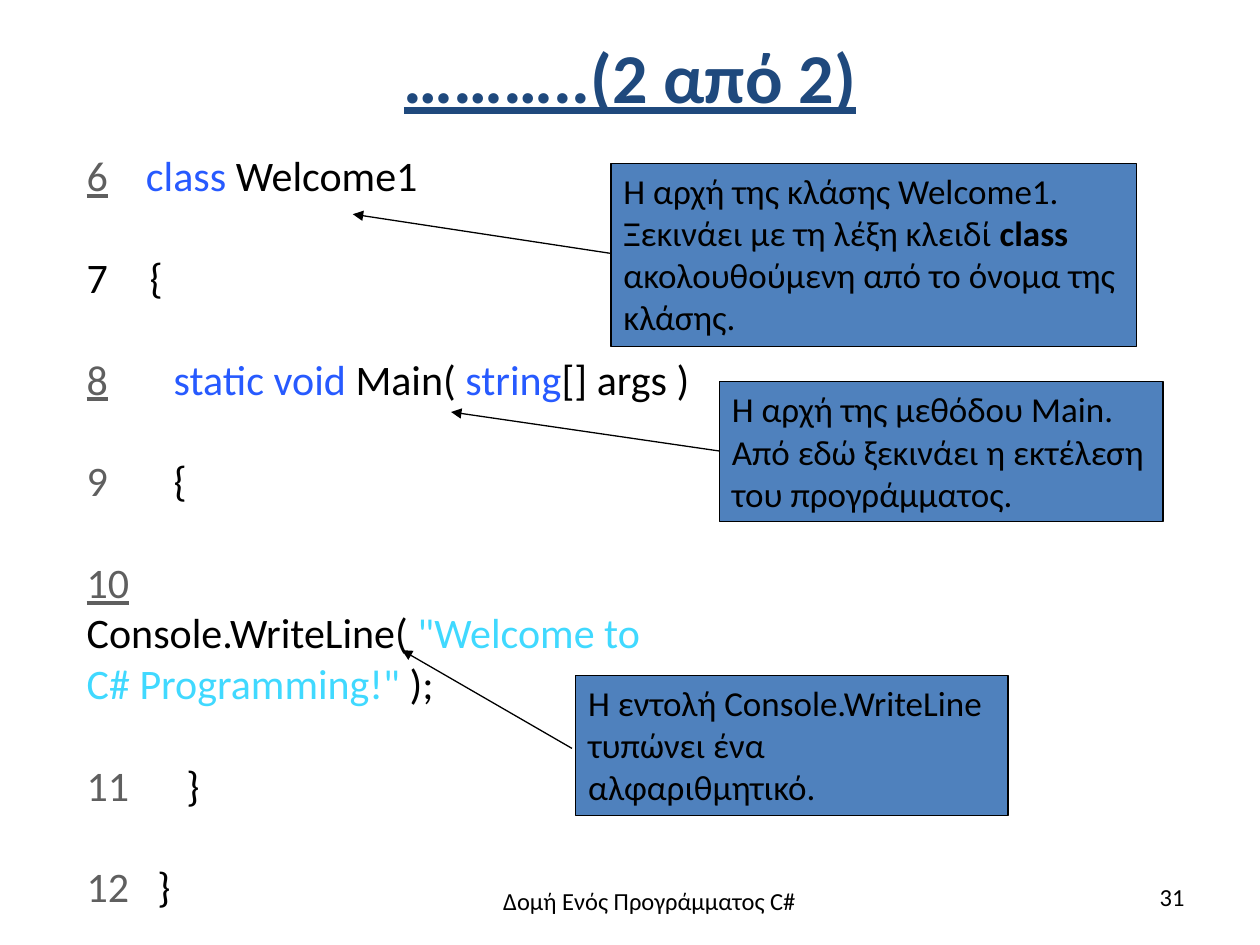
from lxml import etree
from pptx import Presentation
from pptx.dml.color import RGBColor
from pptx.enum.shapes import MSO_CONNECTOR, MSO_SHAPE
from pptx.enum.text import MSO_ANCHOR, PP_ALIGN
from pptx.oxml.ns import qn
from pptx.util import Inches, Pt

LEFT, CENTER, RIGHT = PP_ALIGN.LEFT, PP_ALIGN.CENTER, PP_ALIGN.RIGHT
TOP, MIDDLE = MSO_ANCHOR.TOP, MSO_ANCHOR.MIDDLE
RECT, STRAIGHT = MSO_SHAPE.RECTANGLE, MSO_CONNECTOR.STRAIGHT

THEME = {
    "font": "Calibri",
    "title": 40, "code": 24, "note": 20, "foot": 14, "line": 0.75,
    "navy": "1F497D", "black": "000000", "fill": "4F81BD",
    "num": "5F5F5F", "key": "275AFF", "str": "40D9FF",
}

deck = Presentation()
deck.slide_width, deck.slide_height = Inches(10), Inches(7.5)
slide = deck.slides.add_slide(deck.slide_layouts[6])
shapes = slide.shapes


def share(*parts):
    """Turn percentages of slide width and height, in turn, into lengths."""
    sides = (deck.slide_width, deck.slide_height)
    return [int(part * sides[i % 2] / 100) for i, part in enumerate(parts)]


def write(shape, lines, size, color="black", align=LEFT, anchor=TOP,
          bold=False, under=False, gap=0):
    """Fill a shape; a line is a list of (text, format) runs, "\\v" breaks it."""
    frame = shape.text_frame
    frame.word_wrap, frame.vertical_anchor = True, anchor
    for i, line in enumerate(lines):
        para = frame.paragraphs[0] if i == 0 else frame.add_paragraph()
        para.alignment = align
        para.space_before = Pt(gap if i else 0)
        for words, form in line:
            for j, piece in enumerate(words.split("\v")):
                if j:
                    para.add_line_break()
                run = para.add_run()
                run.text = piece
                font = run.font
                font.name, font.size = THEME["font"], Pt(THEME[size])
                font.bold = form.get("bold", bold)
                font.underline = form.get("under", under)
                tint = THEME[form.get("color", color)]
                font.color.rgb = RGBColor.from_string(tint)


# Title
title = shapes.add_textbox(*share(5, -1.47, 90, 18.93))
write(title, [[("………..(2 από 2)", {})]], "title", color="navy",
      align=CENTER, anchor=MIDDLE, bold=True, under=True)

# Code listing: each line has a tab stop, in inches, after its number
plain, num = {}, {"color": "num"}
link = {"color": "num", "under": True}
key, quote = {"color": "key"}, {"color": "str"}
code = [
    (0.47, [("6", link), ("\tclass", key), (" Welcome1", plain)]),
    (0.5, [("{", plain)]),
    (0.69, [("8", link), ("\tstatic void", key), (" Main( ", plain),
            ("string", key), ("[] args )", plain)]),
    (0.69, [("9", num), ("\t{", plain)]),
    (0.69, [("10", link), ("\vConsole.WriteLine( ", plain),
            ("\"Welcome to \vC# Programming!\" ", quote), (");", plain)]),
    (0.79, [("11", num), ("\t}", plain)]),
    (0.56, [("12", num), ("\t}", plain)]),
]
listing = shapes.add_textbox(*share(5.9, 15.2, 50, 76.8))
write(listing, [line for stop, line in code], "code", gap=29.3)
for para, (stop, line) in zip(listing.text_frame.paragraphs, code):
    props = para._p.get_or_add_pPr()
    reach = str(Inches(stop))
    if line[0][0] == "{":
        props.set("marL", reach)
        props.set("indent", "-" + reach)
        etree.SubElement(props, qn("a:buFont"), typeface="+mj-lt")
        etree.SubElement(props, qn("a:buAutoNum"), type="arabicPlain", startAt="7")
    else:
        tabs = etree.SubElement(props, qn("a:tabLst"))
        etree.SubElement(tabs, qn("a:tab"), pos=reach, algn="l")

# Notes, each with an arrow to its line of code
notes = [
    ((45.7, 71.47, 34.3, 14.8), (45.4, 79.2, 31.9, 68.8),
     [("Η εντολή Console.WriteLine τυπώνει ένα αλφαριθμητικό.", plain)]),
    ((57.1, 40.4, 35.2, 14.8), (57.1, 47.73, 35.8, 43.6),
     [("Η αρχή της μεθόδου Main. Από εδώ ξεκινάει η εκτέλεση "
       "του προγράμματος.", plain)]),
    ((48.5, 17.33, 41.7, 19.33), (48.4, 26.8, 28, 22.67),
     [("Η αρχή της κλάσης Welcome1. Ξεκινάει με τη λέξη κλειδί ", plain),
      ("class ", {"bold": True}),
      ("ακολουθούμενη από το όνομα της κλάσης.", plain)]),
]
for area, ends, line in notes:
    note = shapes.add_shape(RECT, *share(*area))
    note.shadow.inherit = False
    note.fill.solid()
    note.fill.fore_color.rgb = RGBColor.from_string(THEME["fill"])
    write(note, [line], "note")

    arrow = shapes.add_connector(STRAIGHT, *share(*ends))
    for item in (note, arrow):
        item.line.color.rgb = RGBColor.from_string(THEME["black"])
        item.line.width = Pt(THEME["line"])
    etree.SubElement(arrow.line._get_or_add_ln(), qn("a:tailEnd"), type="triangle")
    etree.SubElement(arrow._element.spPr, qn("a:effectLst"))

# Footer and slide number
for area, words, align in [
    ((34.1, 93.07, 34.9, 7.33), "Δομή Ενός Προγράμματος C#", CENTER),
    ((71.7, 92.67, 23.3, 5.33), "31", RIGHT),
]:
    write(shapes.add_textbox(*share(*area)), [[(words, plain)]], "foot", align=align)

deck.save("out.pptx")
